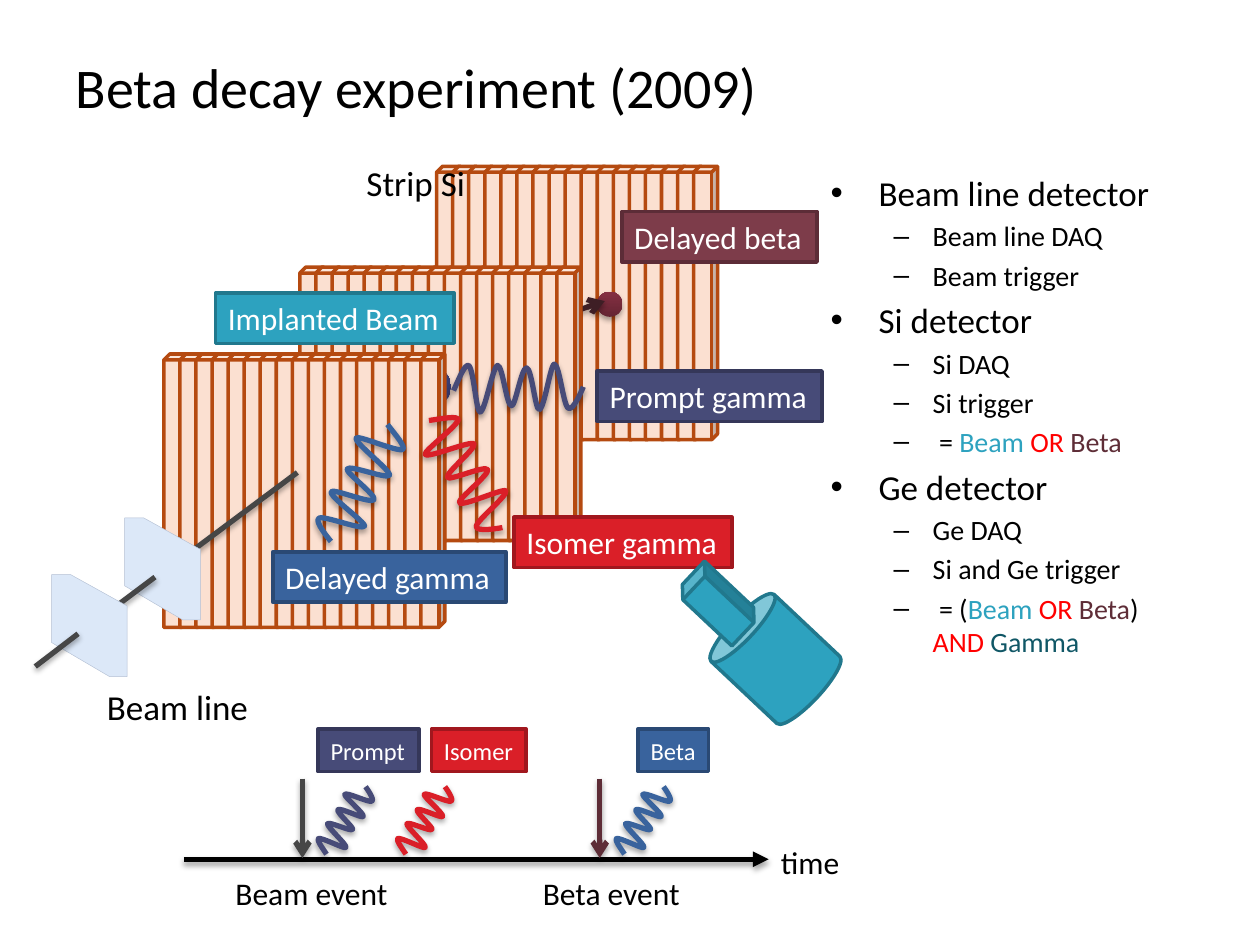
from dataclasses import dataclass

from lxml.etree import SubElement
from pptx import Presentation
from pptx.dml.color import RGBColor
from pptx.enum.shapes import MSO_CONNECTOR as Connector, MSO_SHAPE as Preset
from pptx.enum.text import MSO_ANCHOR as Anchor, PP_ALIGN as Align
from pptx.oxml.ns import qn
from pptx.util import Emu, Inches, Pt


@dataclass(frozen=True)
class Theme:
    font: str = "Calibri"
    bullet_font: str = "Arial"
    title: int = 32
    large: int = 20
    label: int = 18
    item: int = 16
    small: int = 14
    outline: int = 2
    stroke: int = 3
    black: str = "000000"
    white: str = "FFFFFF"
    red: str = "FF0000"
    beam: str = "464646"
    beta: str = "5E2D37"
    beta_track: str = "3E1E25"
    gamma: str = "105766"
    teal: str = "2DA2BF"
    strip: tuple = ("FBE0D1", "B54A10")
    plate: tuple = ("DCE8F8", "B4C0D4")
    implant: tuple = ("2DA2BF", "21788D")
    electron: tuple = ("7D3C4A", "5C2C37")
    prompt: tuple = ("474B78", "353759")
    isomer: tuple = ("DA1F28", "A1171E")
    delayed: tuple = ("39639D", "2A4974")
    beta_ball: tuple = ("652533", "852F42")
    beam_ball: tuple = ("2F335F", "3D427D")


COLUMNS, ROWS = 100, 75
WAVE_START = (0, 2.2)
WAVE_CURVES = [
    ((0.5, 1.1), (0.9, 0.1), (1.2, 0.2)),
    ((1.6, 0.5), (1.8, 3.9), (2.1, 3.9)),
    ((2.5, 3.9), (3.1, 0.3), (3.5, 0.2)),
    ((3.9, 0.2), (4.2, 3.4), (4.6, 3.4)),
    ((4.9, 3.5), (5.4, 0.3), (5.8, 0.4)),
    ((6.2, 0.4), (6.5, 3.8), (6.8, 3.7)),
    ((7.2, 3.7), (7.7, 0.1), (8, 0.1)),
    ((8.4, 0.1), (8.7, 3.3), (9.1, 3.6)),
    ((9.5, 3.9), (10.3, 1.9), (10.3, 1.9)),
]
PLATE_OUTLINE = [(0, 0), (1.5, 0), (6, 2.5), (6, 8.1), (4.6, 8.1), (0, 5.4)]


class Sketch:
    def __init__(self, deck, theme):
        self.theme = theme
        self.slide = deck.slides.add_slide(deck.slide_layouts[5])
        self.shapes = self.slide.shapes
        self.column = deck.slide_width / COLUMNS
        self.row = deck.slide_height / ROWS

    def place(self, left, top, width=0, height=0):
        return (Emu(round(left * self.column)), Emu(round(top * self.row)),
                Emu(round(width * self.column)), Emu(round(height * self.row)))

    def stroke(self, shape, color, width):
        shape.line.color.rgb = RGBColor.from_string(color)
        shape.line.width = Pt(width)

    def effects(self, shape, shadow):
        effects = SubElement(shape._element.spPr, qn("a:effectLst"))
        if shadow:
            outer = SubElement(effects, qn("a:outerShdw"), blurRad="40000", dist="23000",
                               dir="5400000", rotWithShape="0")
            color = SubElement(outer, qn("a:srgbClr"), val=self.theme.black)
            SubElement(color, qn("a:alpha"), val="35000")

    def span(self, para, words, size, color):
        span = para.add_run()
        span.text = words
        span.font.name = self.theme.font
        span.font.size = Pt(size)
        span.font.color.rgb = RGBColor.from_string(color)

    def title(self, words, area):
        box = self.shapes.title
        box.left, box.top, box.width, box.height = self.place(*area)
        box.text_frame.vertical_anchor = Anchor.MIDDLE
        para = box.text_frame.paragraphs[0]
        para.alignment = Align.LEFT
        self.span(para, words, self.theme.title, self.theme.black)

    def outline_list(self, entries, area):
        frame = self.shapes.add_textbox(*self.place(*area)).text_frame
        frame.word_wrap = True
        frame.margin_right = Inches(0.25)
        for index, (level, spans) in enumerate(entries):
            para = frame.paragraphs[0] if index == 0 else frame.add_paragraph()
            size, mark, margin, hang = [(self.theme.large, "•", 0.38, 0.38),
                                        (self.theme.item, "–", 0.81, 0.31)][level]
            para.level = level
            para.space_before = Pt(size * 0.2)
            properties = para._p.get_or_add_pPr()
            properties.set("marL", str(Inches(margin)))
            properties.set("indent", str(-Inches(hang)))
            SubElement(properties, qn("a:buFont"), typeface=self.theme.bullet_font)
            SubElement(properties, qn("a:buChar"), char=mark)
            for words, color in spans:
                self.span(para, words, size, color)

    def note(self, words, area, size):
        frame = self.shapes.add_textbox(*self.place(*area)).text_frame
        frame.word_wrap = False
        self.span(frame.paragraphs[0], words, size, self.theme.black)

    def solid(self, preset, area, colors, turn=0, parent=None):
        shape = (parent or self).shapes.add_shape(preset, *self.place(*area))
        shape.fill.solid()
        shape.fill.fore_color.rgb = RGBColor.from_string(colors[0])
        self.stroke(shape, colors[1], self.theme.outline)
        shape.rotation = turn
        self.effects(shape, False)
        return shape

    def label(self, words, area, colors, size):
        frame = self.solid(Preset.RECTANGLE, area, colors).text_frame
        frame.word_wrap = False
        frame.vertical_anchor = Anchor.MIDDLE
        frame.paragraphs[0].alignment = Align.LEFT
        self.span(frame.paragraphs[0], words, size, self.theme.white)

    def strip_panel(self, left, top, count=17, pitch=1.275):
        group = self.shapes.add_group_shape()
        for index in range(count):
            area = (left + index * pitch, top, 1.9, 21.7)
            self.solid(Preset.CUBE, area, self.theme.strip, parent=group)

    def ball(self, left, top, size, colors):
        shape = self.shapes.add_shape(Preset.OVAL, *self.place(left, top, size, size))
        shape.fill.gradient()
        shape.fill.gradient_angle = 90
        for stop, color in zip(shape.fill.gradient_stops, colors):
            stop.color.rgb = RGBColor.from_string(color)
        shape.line.fill.background()
        self.effects(shape, True)

    def line(self, start, end, color, head=None):
        ends = self.place(*start, *end)
        line = self.shapes.add_connector(Connector.STRAIGHT, *ends)
        self.stroke(line, color, self.theme.stroke)
        if head:
            SubElement(line.line._get_or_add_ln(), qn("a:tailEnd"), type=head)
        self.effects(line, True)

    def freeform(self, points, left, top, closed):
        spots = [self.place(left + x, top + y)[:2] for x, y in points]
        builder = self.shapes.build_freeform(*spots[0])
        builder.add_line_segments(spots[1:], close=closed)
        return builder.convert_to_shape()

    def wave(self, left, top, color, turn=0, scale=1):
        anchors = [WAVE_START] + [curve[-1] for curve in WAVE_CURVES]
        scaled = [(x * scale, y * scale) for x, y in anchors]
        shape = self.freeform(scaled, left, top, False)
        segments = list(shape._element.iter(qn("a:lnTo")))
        for segment, curve in zip(segments, WAVE_CURVES):
            bend = SubElement(segment.getparent(), qn("a:cubicBezTo"))
            for x, y in curve:
                across, down = self.place(left + x * scale, top + y * scale)[:2]
                SubElement(bend, qn("a:pt"), x=str(across - shape.left), y=str(down - shape.top))
            segment.getparent().replace(segment, bend)
        shape.fill.background()
        self.stroke(shape, color, self.theme.stroke)
        shape.rotation = turn
        self.effects(shape, True)

    def plate(self, left, top):
        shape = self.freeform(PLATE_OUTLINE, left, top, True)
        shape.fill.solid()
        shape.fill.fore_color.rgb = RGBColor.from_string(self.theme.plate[0])
        self.stroke(shape, self.theme.plate[1], 0.25)
        self.effects(shape, False)


def main():
    deck = Presentation()
    deck.slide_width, deck.slide_height = Inches(10), Inches(7.5)
    theme = Theme()
    sketch = Sketch(deck, theme)
    sketch.title("Beta decay experiment (2009)", (5, 3, 90, 7.7))

    def plain(level, words):
        return level, [(words, theme.black)]

    sketch.outline_list([
        plain(0, "Beam line detector"), plain(1, "Beam line DAQ"), plain(1, "Beam trigger"),
        plain(0, "Si detector"), plain(1, "Si DAQ"), plain(1, "Si trigger"),
        (1, [(" = ", theme.black), ("Beam", theme.teal), (" OR ", theme.red),
             ("Beta", theme.beta)]),
        plain(0, "Ge detector"), plain(1, "Ge DAQ"), plain(1, "Si and Ge trigger"),
        (1, [(" = (", theme.black), ("Beam ", theme.teal), ("OR ", theme.red),
             ("Beta", theme.beta), (") ", theme.black), ("AND ", theme.red),
             ("Gamma", theme.gamma)]),
    ], (64.95, 13.1, 30.7, 53.9))

    sketch.strip_panel(34.65, 13.2)
    sketch.ball(47.4, 23.15, 2, theme.beta_ball)
    sketch.line((38.6, 27.1), (48, 23.9), theme.beta_track, "arrow")
    sketch.strip_panel(23.8, 21.2)
    sketch.ball(32.6, 29.1, 3.2, theme.beam_ball)
    sketch.line((28.7, 34.2), (33.9, 30.3), theme.beam, "arrow")
    sketch.strip_panel(13, 28.1)

    sketch.label("Implanted Beam", (17.1, 23.25, 18.95, 4), theme.implant, theme.label)
    sketch.label("Delayed beta", (49.35, 16.8, 15.5, 4), theme.electron, theme.label)
    sketch.wave(36, 28.8, theme.prompt[0])
    sketch.wave(31.85, 35.6, theme.isomer[0], 57.2)
    sketch.label("Prompt gamma", (47.4, 29.45, 17.85, 4), theme.prompt, theme.label)
    sketch.label("Isomer gamma", (40.8, 41.05, 17.3, 4), theme.isomer, theme.label)
    sketch.label("Delayed gamma", (21.65, 43.8, 18.5, 4), theme.delayed, theme.label)
    sketch.solid(Preset.CAN, (57.9, 47.8, 7.3, 9), theme.implant, 313.3)
    sketch.solid(Preset.CUBE, (55.3, 44.8, 3.4, 6.2), theme.implant, 313.3)
    sketch.wave(23.4, 36.35, theme.delayed[0], 117.4)

    sketch.line((13.4, 45.1), (23.6, 37.5), theme.beam)
    sketch.plate(9.9, 41.1)
    sketch.line((7.5, 49.4), (12.3, 45.8), theme.beam)
    sketch.plate(4.1, 45.6)
    sketch.line((2.8, 52.9), (6.2, 50.3), theme.beam)
    sketch.note("Strip Si", (28.1, 12.3, 9.9, 4.4), theme.large)
    sketch.note("Beam line", (7.5, 53.9, 13.3, 4.4), theme.large)

    sketch.line((14.6, 68.2), (61, 68.2), theme.black, "triangle")
    sketch.note("time", (61, 66.4, 6.7, 4), theme.label)
    for words, left, width, arrow, color in [
        ("Beam event", 17.7, 14.2, 24, theme.beam),
        ("Beta event", 42.1, 13, 47.6, theme.beta),
    ]:
        sketch.line((arrow, 61.8), (arrow, 68.1), color, "arrow")
        sketch.note(words, (left, 68.9, width, 4), theme.label)
    for words, left, width, wave, colors in [
        ("Prompt", 25.25, 8, 24.35, theme.prompt),
        ("Isomer", 34.25, 7.5, 30.65, theme.isomer),
        ("Beta", 50.65, 5.6, 48, theme.delayed),
    ]:
        sketch.wave(wave, 63.9, colors[0], 301.7, 0.6)
        sketch.label(words, (left, 57.85, width, 3.4), colors, theme.small)
    deck.save("out.pptx")


if __name__ == "__main__":
    main()
